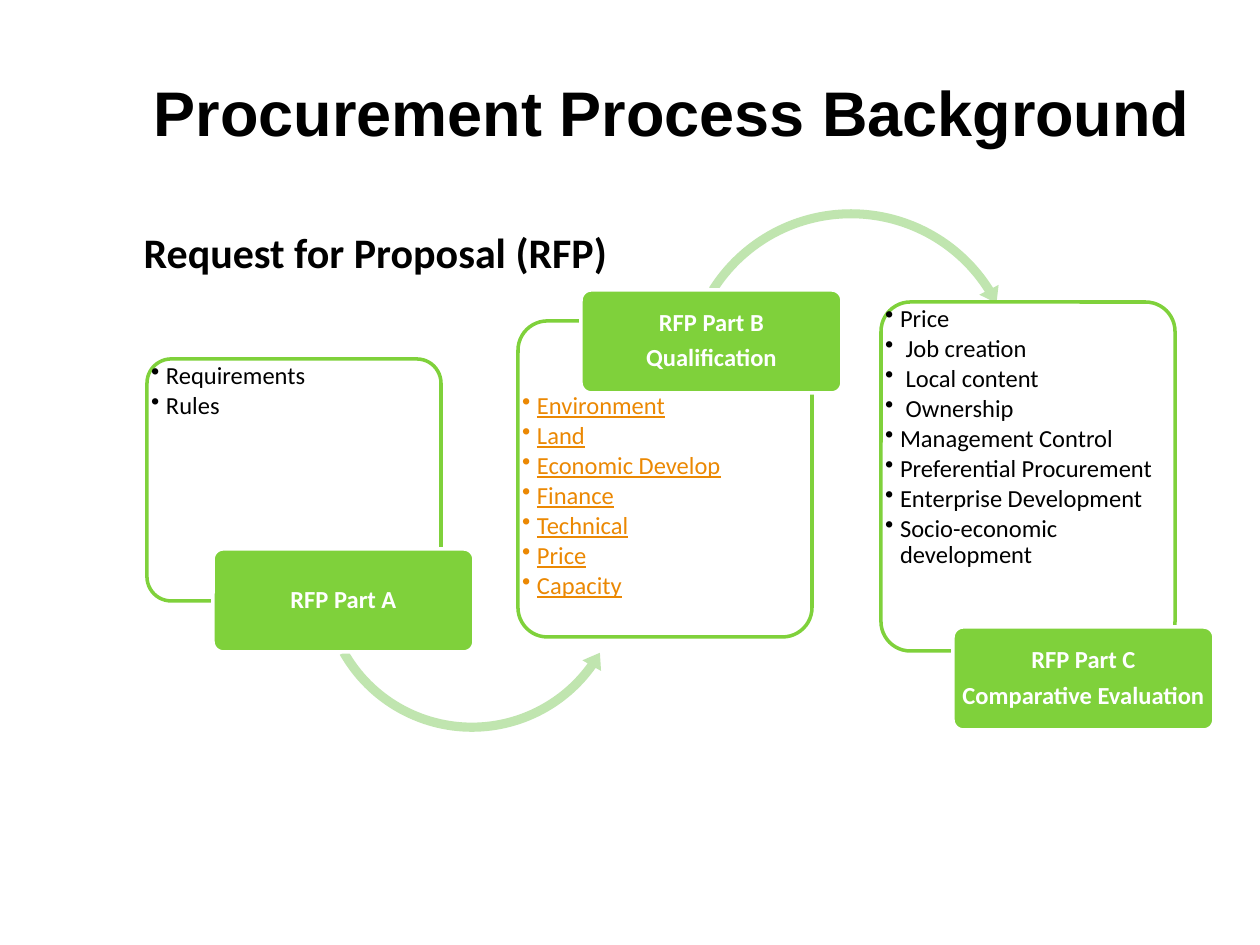
from dataclasses import dataclass
from typing import Optional

from lxml import etree
from pptx import Presentation
from pptx import util as u
from pptx.dml.color import RGBColor
from pptx.enum import shapes, text
from pptx.oxml import ns

EMU_PER_PX = 914400 / 126
CORNER = 0.1


@dataclass(frozen=True)
class Theme:
    green: str = "7FD13B"
    pale_green: str = "C0E5AF"
    link: str = "EB8803"
    black: str = "000000"
    white: str = "FFFFFF"
    heading_font: str = "Arial"
    body_font: str = "Calibri"
    title_size: int = 36
    subtitle_size: int = 24
    text_size: int = 14
    outline: int = 2


@dataclass(frozen=True)
class Box:
    left: int
    top: int
    width: int
    height: int


@dataclass(frozen=True)
class Arrow:
    """Circular arrow; angles in degrees, thickness and head in percent."""
    kind: shapes.MSO_SHAPE
    box: Box
    thickness: float
    head_angle: float
    end_angle: float
    start_angle: float
    head: float


@dataclass(frozen=True)
class Part:
    panel: Box
    items: list[str]
    label: Box
    label_lines: list[str]
    list_top: int
    item_color: str = Theme.black
    underline: bool = False
    arrow: Optional[Arrow] = None


THEME = Theme()
PANEL_WIDTH = 294
LABEL_WIDTH, LABEL_HEIGHT = 261, 103

PARTS = [
    Part(Box(147, 359, PANEL_WIDTH, 242), ["Requirements", "Rules"],
         Box(213, 549, LABEL_WIDTH, LABEL_HEIGHT), ["RFP Part A"], list_top=359,
         arrow=Arrow(shapes.MSO_SHAPE.LEFT_CIRCULAR_ARROW, Box(314, 422, 316, 316),
                     2.9, 5.93, 35.58, 150.47, 3.4)),
    Part(Box(518, 321, PANEL_WIDTH, 316),
         ["Environment", "Land", "Economic Develop", "Finance", "Technical", "Price",
          "Capacity"],
         Box(581, 290, LABEL_WIDTH, LABEL_HEIGHT), ["RFP Part B", "Qualification"],
         list_top=389, item_color=THEME.link, underline=True,
         arrow=Arrow(shapes.MSO_SHAPE.CIRCULAR_ARROW, Box(677, 203, 348, 348),
                     2.6, 5.34, 327.74, 212.26, 3.1)),
    Part(Box(881, 302, PANEL_WIDTH, 349),
         ["Price", " Job creation", " Local content", " Ownership", "Management Control",
          "Preferential Procurement", "Enterprise Development",
          "Socio-economic development"],
         Box(953, 627, LABEL_WIDTH, LABEL_HEIGHT),
         ["RFP Part C", "Comparative Evaluation"], list_top=302),
]


def px(length: float) -> u.Emu:
    return u.Emu(round(length * EMU_PER_PX))


def place(box: Box) -> tuple:
    return px(box.left), px(box.top), px(box.width), px(box.height)


def move(shape, box: Box) -> None:
    shape.left, shape.top, shape.width, shape.height = place(box)


def set_bullet(para, character: Optional[str], indent: int) -> None:
    properties = para._p.get_or_add_pPr()
    properties.set("marL", str(px(indent)))
    properties.set("indent", str(-px(indent)))
    if character:
        etree.SubElement(properties, ns.qn("a:buChar")).set("char", character)
    else:
        etree.SubElement(properties, ns.qn("a:buNone"))


def write_text(frame, lines: list[str], *, size: int = THEME.text_size,
               font: str = THEME.body_font, color: str = THEME.black, bold: bool = False,
               underline: bool = False, align=text.PP_ALIGN.LEFT,
               anchor=text.MSO_ANCHOR.TOP, margins: Optional[tuple] = None,
               bullet: Optional[str] = None, indent: int = 0,
               line_spacing: float = 1.0, space_after: float = 0) -> None:
    frame.word_wrap = True
    frame.auto_size = text.MSO_AUTO_SIZE.NONE
    frame.vertical_anchor = anchor
    if margins:
        frame.margin_left = frame.margin_right = px(margins[0])
        frame.margin_top = frame.margin_bottom = px(margins[1])
    for index, line in enumerate(lines):
        para = frame.paragraphs[0] if index == 0 else frame.add_paragraph()
        set_bullet(para, bullet, indent)
        para.alignment = align
        para.line_spacing = line_spacing
        para.space_before = u.Pt(0)
        para.space_after = u.Pt(space_after)
        span = para.add_run()
        span.text = line
        span.font.size = u.Pt(size)
        span.font.name = font
        span.font.bold = bold
        span.font.underline = underline
        span.font.color.rgb = RGBColor.from_string(color)


def add_filled(page, kind, box: Box, fill: str, line: Optional[str] = None):
    shape = page.shapes.add_shape(kind, *place(box))
    shape.shadow.inherit = False
    shape.fill.solid()
    shape.fill.fore_color.rgb = RGBColor.from_string(fill)
    if line:
        shape.line.color.rgb = RGBColor.from_string(line)
        shape.line.width = u.Pt(THEME.outline)
    else:
        shape.line.fill.background()
    return shape


def add_rounded(page, box: Box, fill: str, line: str):
    shape = add_filled(page, shapes.MSO_SHAPE.ROUNDED_RECTANGLE, box, fill, line)
    shape.adjustments[0] = CORNER
    return shape


def set_opacity(shape, percent: int) -> None:
    color = shape._element.spPr.find(ns.qn("a:solidFill"))[0]
    etree.SubElement(color, ns.qn("a:alpha")).set("val", str(percent * 1000))


def add_arrow(page, arrow: Arrow) -> None:
    shape = add_filled(page, arrow.kind, arrow.box, THEME.pale_green)
    shape.adjustments[0] = arrow.thickness / 100
    for index, degrees in enumerate(
            (arrow.head_angle, arrow.end_angle, arrow.start_angle), start=1):
        shape.adjustments[index] = degrees * 0.6
    shape.adjustments[4] = arrow.head / 100


def add_part(page, part: Part) -> None:
    panel = part.panel
    set_opacity(add_rounded(page, panel, THEME.white, THEME.green), 90)
    list_height = panel.top + panel.height - part.list_top
    if part.label.top > part.list_top:
        list_height -= 52
    items = page.shapes.add_textbox(
        *place(Box(panel.left, part.list_top, panel.width, list_height)))
    write_text(items.text_frame, part.items, color=part.item_color,
               underline=part.underline, margins=(4, 4), bullet="•", indent=15,
               line_spacing=0.9, space_after=2)
    if part.arrow:
        add_arrow(page, part.arrow)
    label = add_rounded(page, part.label, THEME.green, THEME.white)
    write_text(label.text_frame, part.label_lines, color=THEME.white, bold=True,
               align=text.PP_ALIGN.CENTER, anchor=text.MSO_ANCHOR.MIDDLE,
               margins=(0, 2), line_spacing=0.9, space_after=5)


def main() -> None:
    deck = Presentation()
    deck.slide_width, deck.slide_height = px(1260), px(945)
    page = deck.slides.add_slide(deck.slide_layouts[1])
    title, subtitle = page.shapes.title, page.placeholders[1]
    move(title, Box(105, 32, 1134, 158))
    write_text(title.text_frame, ["Procurement Process Background"],
               size=THEME.title_size, font=THEME.heading_font, bold=True,
               align=text.PP_ALIGN.CENTER, anchor=text.MSO_ANCHOR.MIDDLE)
    move(subtitle, Box(131, 195, 1066, 88))
    write_text(subtitle.text_frame, ["Request for Proposal (RFP)"],
               size=THEME.subtitle_size, bold=True, anchor=text.MSO_ANCHOR.BOTTOM)
    for part in PARTS:
        add_part(page, part)
    deck.save("out.pptx")


if __name__ == "__main__":
    main()
